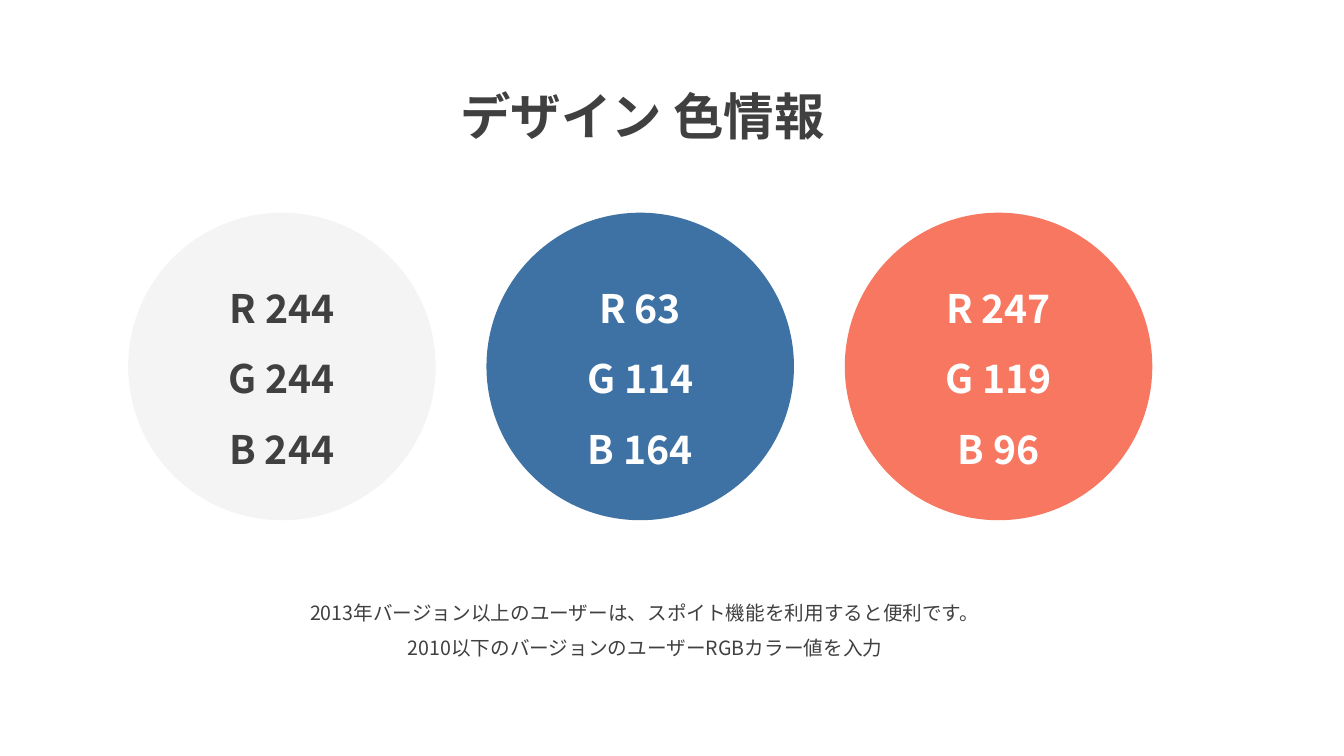
from dataclasses import dataclass

from lxml.etree import SubElement
from pptx import Presentation
from pptx.dml.color import RGBColor
from pptx.enum.shapes import MSO_SHAPE as Shape
from pptx.enum.text import MSO_ANCHOR as Anchor, MSO_AUTO_SIZE as AutoSize, PP_ALIGN as Align
from pptx.oxml.ns import qn
from pptx.util import Cm, Pt


@dataclass(frozen=True)
class Theme:
    font: str = "Noto Sans CJK KR"
    dark: RGBColor = RGBColor(64, 64, 64)
    white: RGBColor = RGBColor(255, 255, 255)
    swatches: tuple = ((244, 244, 244), (63, 114, 164), (247, 119, 96))
    title_size: int = 36
    value_size: int = 28
    note_size: int = 14
    line_spacing: float = 1.5


THEME = Theme()


def write_lines(frame, lines, size, color, bold=False):
    frame.word_wrap = True
    for index, line in enumerate(lines):
        para = frame.add_paragraph() if index else frame.paragraphs[0]
        para.text = line
        para.alignment = Align.CENTER
        para.line_spacing = THEME.line_spacing
        font = para.font
        font.size = Pt(size)
        font.bold = bold
        font.color.rgb = color
        font.name = THEME.font
        defaults = para._p.get_or_add_pPr().find(qn("a:defRPr"))
        SubElement(defaults, qn("a:ea")).set("typeface", THEME.font)


def add_text(page, left, top, width, height, lines, size, bold=False):
    box = page.shapes.add_textbox(Cm(left), Cm(top), Cm(width), Cm(height))
    write_lines(box.text_frame, lines, size, THEME.dark, bold)
    box.text_frame.auto_size = AutoSize.SHAPE_TO_FIT_TEXT


def add_swatch(page, left, top, diameter, channels):
    circle = page.shapes.add_shape(
        Shape.OVAL, Cm(left), Cm(top), Cm(diameter), Cm(diameter)
    )
    circle.shadow.inherit = False
    circle.fill.solid()
    circle.fill.fore_color.rgb = RGBColor(*channels)
    circle.line.fill.background()
    circle.text_frame.vertical_anchor = Anchor.MIDDLE
    lines = [f"{name} {value}" for name, value in zip("RGB", channels)]
    color = THEME.dark if min(channels) > 200 else THEME.white
    write_lines(circle.text_frame, lines, THEME.value_size, color, bold=True)


def main():
    deck = Presentation()
    deck.slide_width, deck.slide_height = Cm(33.87), Cm(19.05)
    page = deck.slides.add_slide(deck.slide_layouts[6])

    for index, channels in enumerate(THEME.swatches):
        add_swatch(page, 3.23 + index * 9.03, 5.36, 7.75, channels)

    add_text(page, 10.03, 1.27, 12.32, 2.31, ["デザイン 色情報"], THEME.title_size, bold=True)
    notes = [
        "2013年バージョン以上のユーザーは、スポイト機能を利用すると便利です。",
        "2010以下のバージョンのユーザーRGBカラー値を入力",
    ]
    add_text(page, 5.64, 14.71, 21.23, 1.96, notes, THEME.note_size)

    deck.save("out.pptx")


if __name__ == "__main__":
    main()
